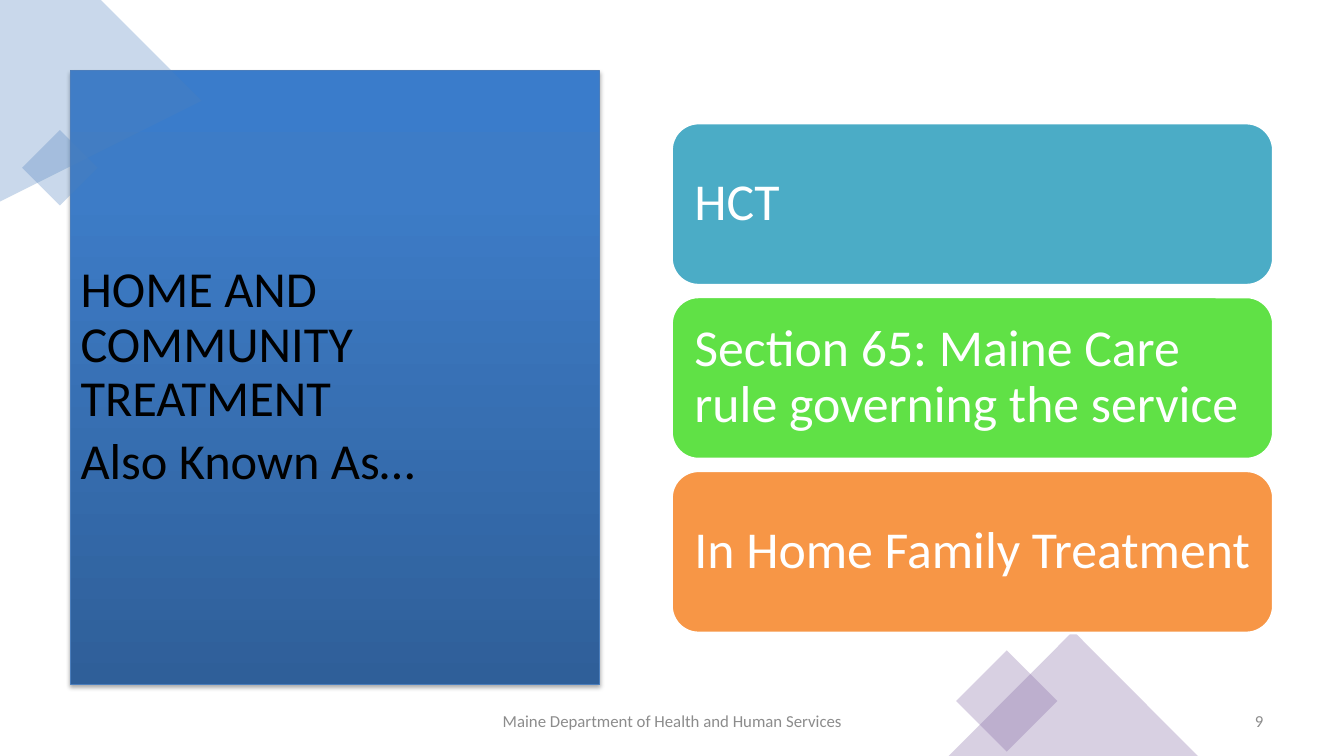
import pptx
import pptx.util
import pptx.dml.color
import pptx.enum.shapes
import pptx.enum.text
import pptx.oxml
import pptx.oxml.ns
from dataclasses import dataclass

# Content
HEADING = ["HOME AND COMMUNITY TREATMENT", "Also Known As…"]
CARDS = [
    ("HCT", "4BACC6"),
    ("Section 65: Maine Care rule governing the service", "60E146"),
    ("In Home Family Treatment", "F79646"),
]
FOOTER = "Maine Department of Health and Human Services"
PAGE_NUMBER = "9"


@dataclass(frozen=True)
class Theme:
    font: str = "Calibri"
    heading_size: float = 36
    card_size: float = 37
    footer_size: float = 12
    dark: str = "000000"
    light: str = "FFFFFF"
    gray: str = "8C8C8C"
    blue: str = "4F81BD"
    purple: str = "8064A2"
    panel_line: str = "4B7EBC"
    panel_stops: tuple = ((0, "2F5F99"), (80, "3D7CC7"), (100, "3A7CCB"))
    accent_opacity: int = 30


THEME = Theme()
SHAPES = pptx.enum.shapes.MSO_SHAPE
ALIGN = pptx.enum.text.PP_ALIGN
inch = pptx.util.Inches
color = pptx.dml.color.RGBColor.from_string

# Layout in inches
WIDTH, HEIGHT = 13.33, 7.5
PANEL = (0.7, 0.7, 5.25, 6.09)
CARD_LEFT, CARD_TOP, CARD_WIDTH, CARD_HEIGHT = 6.66, 1.22, 5.97, 1.61
CARD_STEP = CARD_HEIGHT + 0.115
FOOTER_TOP, FOOTER_HEIGHT = 6.95, 0.4
CORNER = [(0, 0), (0.99, 0), (1.59, 0.59), (0.14, 2.04), (0, 1.91)]

deck = pptx.Presentation()
deck.slide_width, deck.slide_height = inch(WIDTH), inch(HEIGHT)
page = deck.slides.add_slide(deck.slide_layouts[6])


def xml(tag, content):
    namespace = pptx.oxml.ns.nsdecls("a")
    return pptx.oxml.parse_xml(f"<a:{tag} {namespace}>{content}</a:{tag}>")


def add_shape(kind, place):
    shape = page.shapes.add_shape(kind, *map(inch, place))
    shape.shadow.inherit = False
    return shape


def write(shape, lines, size, hue, align=ALIGN.LEFT, spacing=None, inset=None):
    frame = shape.text_frame
    frame.word_wrap = True
    frame.vertical_anchor = pptx.enum.text.MSO_ANCHOR.MIDDLE
    if inset is not None:
        frame.margin_left = frame.margin_right = inch(inset)
        frame.margin_top = frame.margin_bottom = inch(inset)
    frame.text = "\n".join(lines)
    for para in frame.paragraphs:
        para.alignment = align
        para.line_spacing = spacing
        para.space_after = pptx.util.Pt(6)
        for span in para.runs:
            span.font.name = THEME.font
            span.font.size = pptx.util.Pt(size)
            span.font.color.rgb = color(hue)


def tint(shape, hue):
    shape.fill.solid()
    shape.fill.fore_color.rgb = color(hue)
    shape.line.fill.background()
    fill_color = shape.fill._xPr.find(".//" + pptx.oxml.ns.qn("a:srgbClr"))
    alpha = pptx.oxml.parse_xml(
        f'<a:alpha {pptx.oxml.ns.nsdecls("a")} val="{THEME.accent_opacity * 1000}"/>')
    fill_color.append(alpha)


def add_diamond(left, top, side, hue):
    diamond = add_shape(SHAPES.RECTANGLE, (left, top, side, side))
    diamond.rotation = 45
    tint(diamond, hue)


# Heading panel with gradient and shadow
panel = add_shape(SHAPES.RECTANGLE, PANEL)
panel.fill.gradient()
panel.fill.gradient_angle = 90
panel.line.color.rgb = color(THEME.panel_line)
panel.line.width = pptx.util.Pt(0.75)
properties = panel.element.spPr
stops = properties.find(".//" + pptx.oxml.ns.qn("a:gsLst"))
stops.getparent().replace(stops, xml("gsLst", "".join(
    f'<a:gs pos="{position * 1000}"><a:srgbClr val="{hue}"/></a:gs>'
    for position, hue in THEME.panel_stops)))
effects = properties.find(pptx.oxml.ns.qn("a:effectLst"))
properties.replace(effects, xml("effectLst", (
    f'<a:outerShdw blurRad="{pptx.util.Pt(3.1)}" dist="{pptx.util.Pt(1.8)}" '
    f'dir="5400000" rotWithShape="0"><a:srgbClr val="{THEME.dark}">'
    '<a:alpha val="35000"/></a:srgbClr></a:outerShdw>')))
write(panel, HEADING, THEME.heading_size, THEME.dark, spacing=0.9)

# Blue corner accents
builder = page.shapes.build_freeform(*CORNER[0], scale=inch(1))
builder.add_line_segments(CORNER[1:], close=True)
corner = builder.convert_to_shape()
corner.shadow.inherit = False
tint(corner, THEME.blue)
add_diamond(0.33, 1.4, 0.53, THEME.blue)

# Footer and page number
for text, left, width, align in [
    (FOOTER, 4.42, 4.5, ALIGN.CENTER),
    (PAGE_NUMBER, 9.63, 3, ALIGN.RIGHT),
]:
    box = page.shapes.add_textbox(*map(inch, (left, FOOTER_TOP, width, FOOTER_HEIGHT)))
    write(box, [text], THEME.footer_size, THEME.gray, align)

# Purple bottom accents
add_diamond(9.63, 6.6, 0.71, THEME.purple)
tint(add_shape(SHAPES.ISOSCELES_TRIANGLE, (9.41, 6.26, 2.47, 1.24)), THEME.purple)

# Stack of cards
for row, (text, hue) in enumerate(CARDS):
    top = CARD_TOP + row * CARD_STEP
    card = add_shape(SHAPES.ROUNDED_RECTANGLE, (CARD_LEFT, top, CARD_WIDTH, CARD_HEIGHT))
    card.fill.solid()
    card.fill.fore_color.rgb = color(hue)
    card.line.color.rgb = color(THEME.light)
    card.line.width = pptx.util.Pt(2)
    write(card, [text], THEME.card_size, THEME.light, spacing=0.9, inset=0.15)

deck.save("out.pptx")
